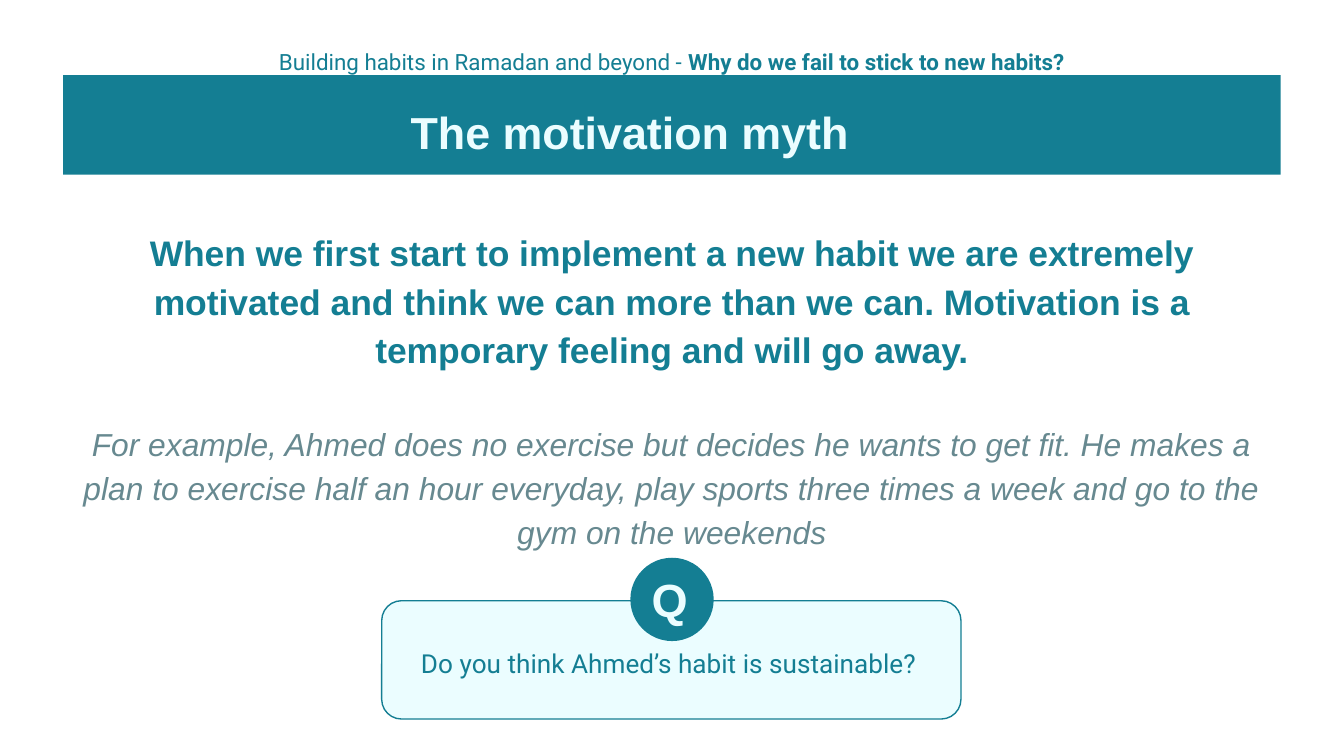
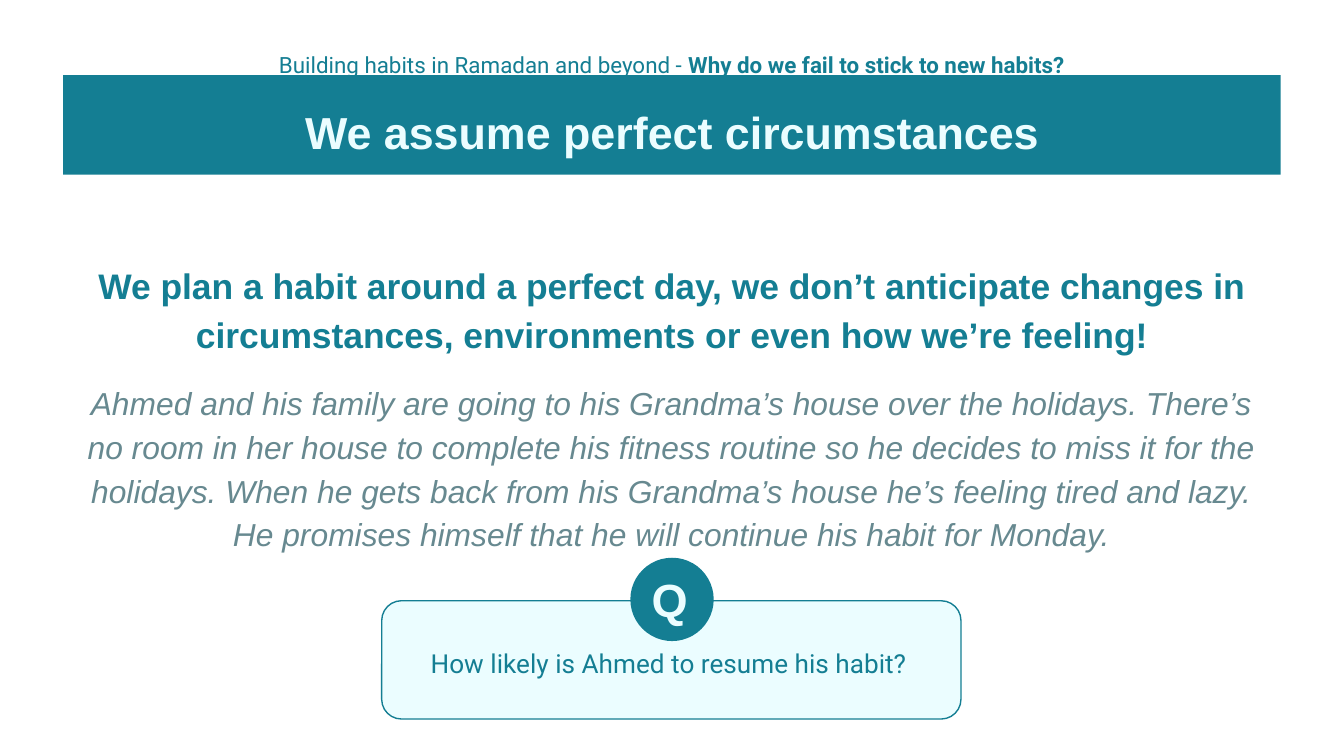
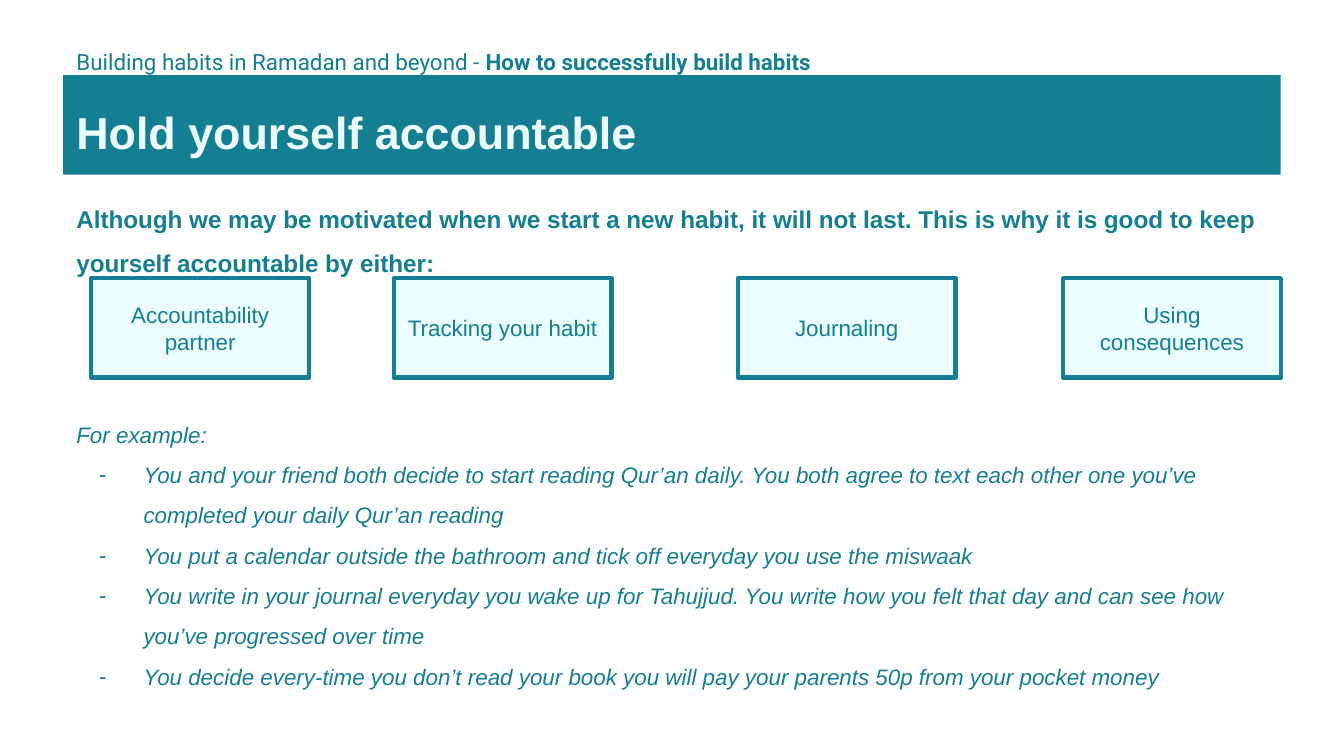
from dataclasses import dataclass
from typing import NamedTuple

from lxml.etree import SubElement
from pptx import Presentation
from pptx.dml.color import RGBColor
from pptx.enum.shapes import MSO_SHAPE
from pptx.enum.text import MSO_ANCHOR, PP_ALIGN
from pptx.oxml.ns import qn
from pptx.util import Inches, Pt

TEAL = RGBColor(0x14, 0x7E, 0x93)
PALE = RGBColor(0xEB, 0xFD, 0xFF)
GREY_TEAL = RGBColor(0x67, 0x89, 0x90)
WHITE = RGBColor(0xFF, 0xFF, 0xFF)
SANS, HEADER_FONT = "Arial", "Roboto"

MARGIN, CONTENT_WIDTH = 0.47, 9.06
COURSE = "Building habits in Ramadan and beyond - "
WHY_WE_FAIL = "Why do we fail to stick to new habits?"


class Area(NamedTuple):
    left: float
    top: float
    width: float
    height: float

    def lengths(self) -> list:
        return [Inches(value) for value in self]


@dataclass(frozen=True)
class Line:
    """One paragraph; bold_tail is a bold run that ends it."""
    text: str
    size: float
    color: RGBColor = TEAL
    font: str = SANS
    bold: bool = False
    italic: bool = False
    align: PP_ALIGN = PP_ALIGN.CENTER
    spacing: float = 1.0
    before: float = 0
    bold_tail: str = ""
    dash: bool = False


@dataclass(frozen=True)
class Heading:
    title: str
    section: str
    title_width: float
    section_area: Area
    align: PP_ALIGN = PP_ALIGN.CENTER


@dataclass(frozen=True)
class Lesson:
    heading: Heading
    body_area: Area
    claim: str
    example: str
    example_gap: float
    question: str


LESSONS = [
    Lesson(
        Heading("The motivation myth", WHY_WE_FAIL, 8.43, Area(1.5, 0.16, 7, 0.52)),
        Area(MARGIN, 1.57, CONTENT_WIDTH, 2.66),
        "When we first start to implement a new habit we are extremely motivated and "
        "think we can more than we can. Motivation is a temporary feeling and will go away.",
        "For example, Ahmed does no exercise but decides he wants to get fit. He makes a "
        "plan to exercise half an hour everyday, play sports three times a week and go to "
        "the gym on the weekends",
        26,
        "Do you think Ahmed’s habit is sustainable? ",
    ),
    Lesson(
        Heading("We assume perfect circumstances", WHY_WE_FAIL, CONTENT_WIDTH,
                Area(1.63, 0.18, 6.74, 0.52)),
        Area(MARGIN, 1.82, CONTENT_WIDTH, 2.38),
        "We plan a habit around a perfect day, we don’t anticipate changes in "
        "circumstances, environments or even how we’re feeling!",
        "Ahmed and his family are going to his Grandma’s house over the holidays. There’s "
        "no room in her house to complete his fitness routine so he decides to miss it for "
        "the holidays. When he gets back from his Grandma’s house he’s feeling tired and "
        "lazy. He promises himself that he will continue his habit for Monday.",
        12,
        "How likely is Ahmed to resume his habit? ",
    ),
]

ACCOUNTABLE = Heading("Hold yourself accountable", "How to successfully build habits",
                      8.43, Area(MARGIN, 0.16, 6.55, 0.52), PP_ALIGN.LEFT)
ACCOUNTABLE_CLAIM = (
    "Although we may be motivated when we start a new habit, it will not last. "
    "This is why it is good to keep yourself accountable by either:"
)
METHODS = {
    "Accountability partner": 0.68,
    "Tracking your habit": 2.93,
    "Journaling": 5.49,
    "Using consequences": 7.91,
}
EXAMPLES = [
    "You and your friend both decide to start reading Qur’an daily. You both agree to "
    "text each other one you’ve completed your daily Qur’an reading",
    "You put a calendar outside the bathroom and tick off everyday you use the miswaak",
    "You write in your journal everyday you wake up for Tahujjud. You write how you felt "
    "that day and can see how you’ve progressed over time",
    "You decide every-time you don’t read your book you will pay your parents 50p from "
    "your pocket money",
]


def add_dash(paragraph) -> None:
    properties = paragraph._p.get_or_add_pPr()
    properties.set("marL", str(Inches(0.5)))
    properties.set("indent", str(Inches(-0.33)))
    dash_color = SubElement(properties, qn("a:buClr"))
    SubElement(dash_color, qn("a:srgbClr")).set("val", str(TEAL))
    SubElement(properties, qn("a:buFont")).set("typeface", SANS)
    SubElement(properties, qn("a:buChar")).set("char", "-")


def write(shape, lines: list[Line], anchor: MSO_ANCHOR = MSO_ANCHOR.TOP) -> None:
    frame = shape.text_frame
    frame.word_wrap = True
    frame.vertical_anchor = anchor
    frame.margin_left = frame.margin_right = Inches(0.1)
    frame.margin_top = frame.margin_bottom = Inches(0.1)
    for index, line in enumerate(lines):
        paragraph = frame.add_paragraph() if index else frame.paragraphs[0]
        paragraph.text = line.text
        if line.bold_tail:
            paragraph.add_run().text = line.bold_tail
        paragraph.alignment = line.align
        paragraph.line_spacing = line.spacing
        paragraph.space_before = Pt(line.before)
        for position, run in enumerate(paragraph.runs):
            run.font.name = line.font
            run.font.size = Pt(line.size)
            run.font.bold = line.bold or position > 0
            run.font.italic = line.italic
            run.font.color.rgb = line.color
        if line.dash:
            add_dash(paragraph)


def add_text(slide, area: Area, *lines: Line) -> None:
    write(slide.shapes.add_textbox(*area.lengths()), list(lines))


def add_panel(slide, kind: MSO_SHAPE, area: Area, fill: RGBColor, line_width: float = 0):
    panel = slide.shapes.add_shape(kind, *area.lengths())
    panel.shadow.inherit = False
    panel.fill.solid()
    panel.fill.fore_color.rgb = fill
    if line_width:
        panel.line.color.rgb = TEAL
        panel.line.width = Pt(line_width)
    else:
        panel.line.fill.background()
    return panel


def add_headed_slide(deck, heading: Heading):
    """Add a blank slide with the title band and the section line above it."""
    slide = deck.slides.add_slide(deck.slide_layouts[6])
    slide.background.fill.solid()
    slide.background.fill.fore_color.rgb = WHITE
    add_panel(slide, MSO_SHAPE.RECTANGLE, Area(MARGIN, 0.56, CONTENT_WIDTH, 0.74), TEAL)
    add_text(slide, Area(MARGIN, 0.62, heading.title_width, 0.62),
             Line(heading.title, 24, PALE, bold=True, align=heading.align, spacing=1.15))
    add_text(slide, heading.section_area,
             Line(COURSE, 12, font=HEADER_FONT, align=heading.align, spacing=1.5,
                  bold_tail=heading.section))
    return slide


def add_question(slide, question: str) -> None:
    add_panel(slide, MSO_SHAPE.ROUNDED_RECTANGLE, Area(2.84, 4.47, 4.31, 0.88), PALE, 0.75)
    add_panel(slide, MSO_SHAPE.OVAL, Area(4.69, 4.15, 0.62, 0.62), TEAL)
    add_text(slide, Area(4.75, 4.18, 0.5, 0.56),
             Line("Q", 24.9, PALE, bold=True, align=PP_ALIGN.LEFT, spacing=0.95))
    add_text(slide, Area(1.67, 4.72, 6.66, 0.52), Line(question, 14, font=HEADER_FONT))


def add_lesson(deck, lesson: Lesson) -> None:
    slide = add_headed_slide(deck, lesson.heading)
    add_text(slide, lesson.body_area,
             Line(lesson.claim, 19, bold=True, spacing=1.15),
             Line(lesson.example, 17, GREY_TEAL, italic=True, spacing=1.15,
                  before=lesson.example_gap))
    add_question(slide, lesson.question)


def add_accountability(deck) -> None:
    slide = add_headed_slide(deck, ACCOUNTABLE)
    add_text(slide, Area(MARGIN, 1.31, CONTENT_WIDTH, 4.25),
             Line(ACCOUNTABLE_CLAIM, 13, bold=True, align=PP_ALIGN.LEFT, spacing=1.5),
             Line("For example:", 12, italic=True, align=PP_ALIGN.LEFT, spacing=1.5,
                  before=70),
             *(Line(example, 12, italic=True, align=PP_ALIGN.LEFT, spacing=1.5, dash=True)
               for example in EXAMPLES))
    for method, left in METHODS.items():
        box = add_panel(slide, MSO_SHAPE.RECTANGLE, Area(left, 2.07, 1.62, 0.74), PALE, 2.25)
        write(box, [Line(method, 12)], MSO_ANCHOR.MIDDLE)


def main() -> None:
    deck = Presentation()
    deck.slide_width = Inches(10)
    deck.slide_height = deck.slide_width * 9 // 16
    for lesson in LESSONS:
        add_lesson(deck, lesson)
    add_accountability(deck)
    deck.save("out.pptx")


if __name__ == "__main__":
    main()
